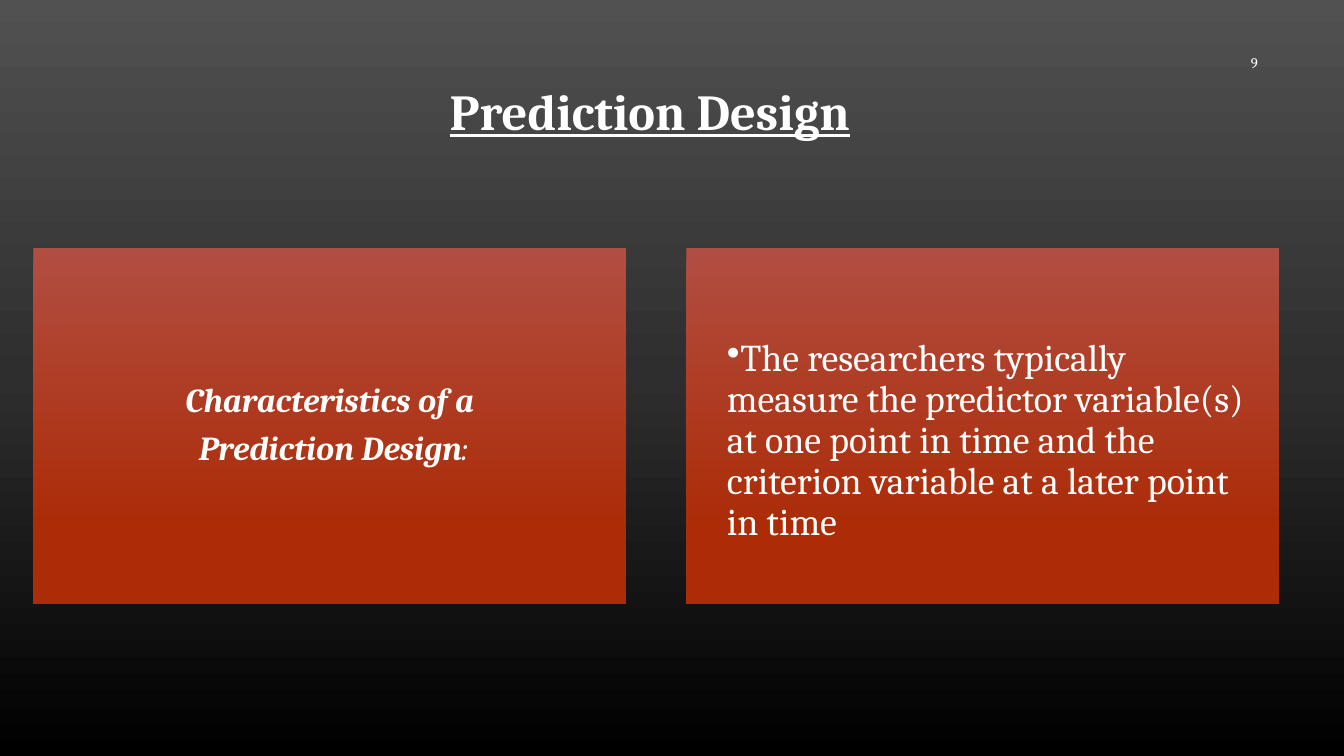
import dataclasses
import typing

import lxml.etree
import pptx
import pptx.dml.color
import pptx.enum.shapes
import pptx.enum.text
import pptx.oxml.ns
import pptx.util

Cm = pptx.util.Cm
Pt = pptx.util.Pt
ALIGN = pptx.enum.text.PP_ALIGN
ANCHOR = pptx.enum.text.MSO_ANCHOR

COLORS = {
    "text": "FFFFFF",
    "page_top": "515151",
    "page_middle": "2E2E2E",
    "page_bottom": "000000",
    "card_top": "B14E42",
    "card_bottom": "AC2C08",
}
PAGE_STOPS = [(0, "page_top"), (50, "page_middle"), (100, "page_bottom")]
CARD_STOPS = [(0, "card_top"), (78, "card_bottom")]
CARD_TOP, CARD_WIDTH, CARD_HEIGHT = 6.25, 14.94, 8.97
CARD_LEFT, CARD_STEP = 0.84, 16.46


@dataclasses.dataclass
class Span:
    text: str
    font: dict[str, typing.Any]


@dataclasses.dataclass
class Para:
    spans: list[Span]
    layout: dict[str, typing.Any]
    bullet_indent: float = 0


@dataclasses.dataclass
class Block:
    paras: list[Para]
    frame: dict[str, typing.Any]


@dataclasses.dataclass
class Label:
    left: float
    top: float
    width: float
    height: float
    block: Block


EMPHASIS = {"size": Pt(24), "bold": True, "italic": True}
CENTERED = {"alignment": ALIGN.CENTER, "line_spacing": 0.9, "space_after": Pt(8.4)}
MARGINS = ("margin_left", "margin_top", "margin_right", "margin_bottom")

LABELS = [
    Label(24.33, 1.07, 7.62, 1.02, Block(
        [Para([Span("9", {"size": Pt(10.5)})], {"alignment": ALIGN.RIGHT})],
        {"vertical_anchor": ANCHOR.MIDDLE})),
    Label(2.29, 1.9, 28.17, 3.18, Block(
        [Para([Span("Prediction Design", {"size": Pt(36), "bold": True, "underline": True})],
              {"alignment": ALIGN.CENTER})],
        {"vertical_anchor": ANCHOR.TOP})),
]
CARDS = [
    Block(
        [Para([Span("Characteristics of a", EMPHASIS)], CENTERED),
         Para([Span(" Prediction Design", EMPHASIS),
               Span(":", EMPHASIS | {"bold": False})], CENTERED)],
        {"vertical_anchor": ANCHOR.MIDDLE} | dict.fromkeys(MARGINS, Cm(0.25))),
    Block(
        [Para([Span("The researchers typically measure the predictor variable(s) at one "
                    "point in time and the criterion variable at a later point in time",
                    {"size": Pt(27)})],
              {"alignment": ALIGN.LEFT, "line_spacing": 0.9}, bullet_indent=0.64)],
        {"vertical_anchor": ANCHOR.TOP} | dict.fromkeys(MARGINS, Cm(0.38))
        | {"margin_top": Cm(2.3)}),
]


def set_attributes(target: typing.Any, values: dict[str, typing.Any]) -> None:
    for name, value in values.items():
        setattr(target, name, value)


def fill_gradient(fill: typing.Any, element: typing.Any, stops: list[tuple[int, str]]) -> None:
    qn = pptx.oxml.ns.qn
    fill.gradient()
    fill.gradient_angle = 270
    stop_list = next(element.iter(qn("a:gsLst")))
    for stop in list(stop_list):
        stop_list.remove(stop)
    for percent, color in stops:
        stop = lxml.etree.SubElement(stop_list, qn("a:gs"), pos=str(percent * 1000))
        lxml.etree.SubElement(stop, qn("a:srgbClr"), val=COLORS[color])


def write_block(frame: typing.Any, block: Block) -> None:
    set_attributes(frame, {"word_wrap": True} | block.frame)
    for index, item in enumerate(block.paras):
        para = frame.add_paragraph() if index else frame.paragraphs[0]
        set_attributes(para, item.layout)
        if item.bullet_indent:
            properties = para._p.get_or_add_pPr()
            properties.set("marL", str(Cm(item.bullet_indent)))
            properties.set("indent", "0")
            lxml.etree.SubElement(properties, pptx.oxml.ns.qn("a:buChar"), char="•")
        for part in item.spans:
            span = para.add_run()
            span.text = part.text
            set_attributes(span.font, {"name": "Cambria"} | part.font)
            span.font.color.rgb = pptx.dml.color.RGBColor.from_string(COLORS["text"])


def add_label(page: typing.Any, label: Label) -> None:
    box = page.shapes.add_textbox(
        Cm(label.left), Cm(label.top), Cm(label.width), Cm(label.height))
    write_block(box.text_frame, label.block)


def add_card(page: typing.Any, left: float, block: Block) -> None:
    card = page.shapes.add_shape(
        pptx.enum.shapes.MSO_SHAPE.RECTANGLE,
        Cm(left), Cm(CARD_TOP), Cm(CARD_WIDTH), Cm(CARD_HEIGHT))
    card.shadow.inherit = False
    card.line.fill.background()
    fill_gradient(card.fill, card._element, CARD_STOPS)
    write_block(card.text_frame, block)


def main() -> None:
    deck = pptx.Presentation()
    set_attributes(deck, {"slide_width": Cm(33.87), "slide_height": Cm(19.05)})
    page = deck.slides.add_slide(deck.slide_layouts[6])
    fill_gradient(page.background.fill, page._element, PAGE_STOPS)
    for label in LABELS:
        add_label(page, label)
    for column, block in enumerate(CARDS):
        add_card(page, CARD_LEFT + column * CARD_STEP, block)
    deck.save("out.pptx")


if __name__ == "__main__":
    main()
